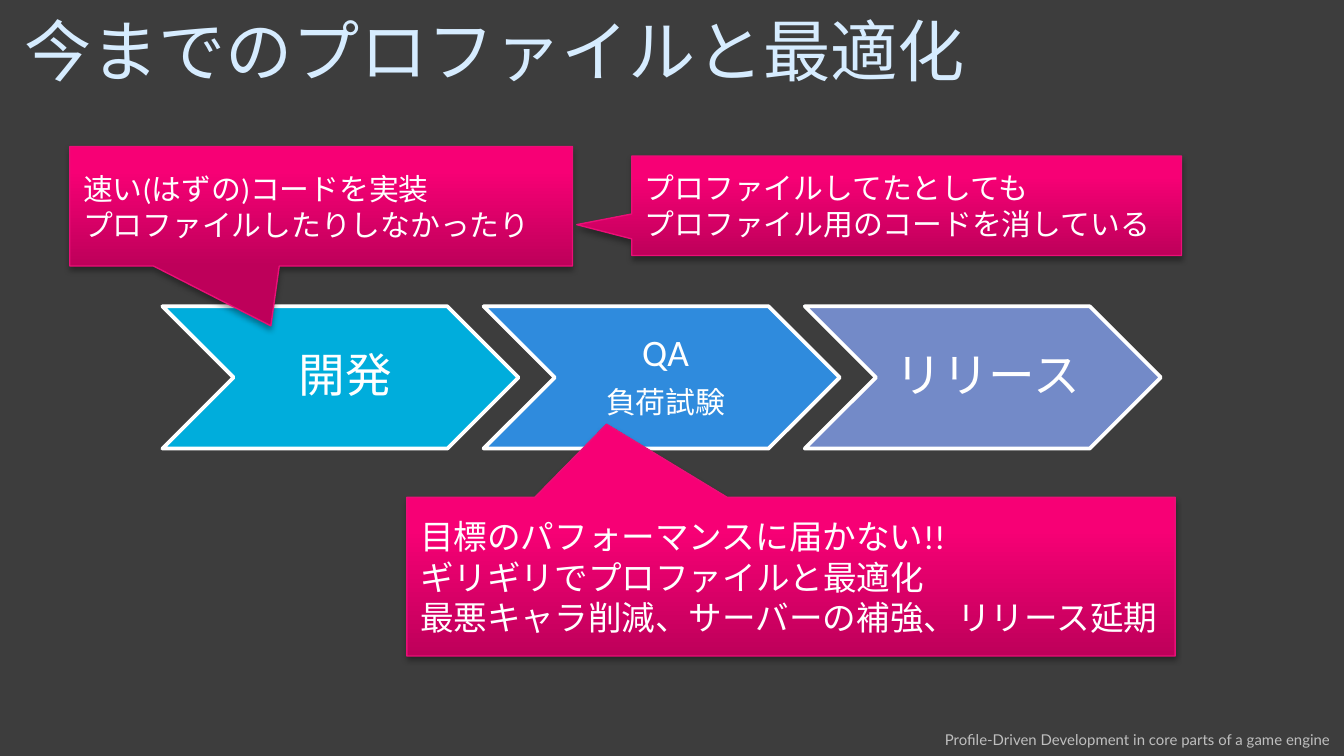
"""Build the slide on profiling and optimisation across the development stages."""
from copy import deepcopy
from dataclasses import dataclass

from lxml.etree import SubElement
from pptx import Presentation
from pptx.dml.color import RGBColor
from pptx.enum.shapes import MSO_SHAPE
from pptx.enum.text import MSO_ANCHOR, PP_ALIGN
from pptx.oxml.ns import qn
from pptx.shapes.autoshape import Shape
from pptx.slide import Slide
from pptx.text.text import TextFrame
from pptx.util import Cm, Pt

BACKGROUND = RGBColor(0x3D, 0x3D, 0x3D)
TITLE_COLOR = RGBColor(0xD6, 0xEC, 0xFF)
FOOTER_COLOR = RGBColor(0xBF, 0xBF, 0xBF)
WHITE = RGBColor(0xFF, 0xFF, 0xFF)
CYAN = RGBColor(0x00, 0xAD, 0xDC)
BLUE = RGBColor(0x2F, 0x8B, 0xDD)
PERIWINKLE = RGBColor(0x73, 0x8A, 0xC8)
CALLOUT_LINE = RGBColor(0xEA, 0x0F, 0x77)
CALLOUT_STOPS = (
    (0, RGBColor(0xBE, 0x00, 0x5A)),
    (0.8, RGBColor(0xF7, 0x00, 0x75)),
    (1, RGBColor(0xF8, 0x00, 0x76)),
)

STAGE_LEFT, STAGE_TOP, STAGE_PITCH = 3.07, 5.79, 6.07
STAGE_WIDTH, STAGE_HEIGHT = 6.73, 2.69


@dataclass(frozen=True)
class Line:
    text: str
    size: float


@dataclass(frozen=True)
class Stage:
    lines: tuple[Line, ...]
    color: RGBColor
    left_inset: float
    inset: float


@dataclass(frozen=True)
class Callout:
    left: float
    top: float
    width: float
    height: float
    tip: tuple[float, float]
    lines: tuple[Line, ...]


STAGES = (
    Stage((Line("開発", 25),), CYAN, 0.28, 0.1),
    Stage((Line("QA", 20), Line("負荷試験", 16)), BLUE, 0.23, 0.08),
    Stage((Line("リリース", 25),), PERIWINKLE, 0.28, 0.1),
)

CALLOUTS = (
    Callout(1.32, 2.77, 9.5, 2.26, (-0.1, 1), (
        Line("速い(はずの)コードを実装", 16),
        Line("プロファイルしたりしなかったり", 16),
    )),
    Callout(7.69, 9.4, 14.52, 3, (-0.24, -0.96), (
        Line("目標のパフォーマンスに届かない!!", 18),
        Line("ギリギリでプロファイルと最適化", 18),
        Line("最悪キャラ削減、サーバーの補強、リリース延期", 18),
    )),
    Callout(11.94, 2.95, 10.39, 1.88, (-0.6, 0.19), (
        Line("プロファイルしてたとしても", 16),
        Line("プロファイル用のコードを消している", 16),
    )),
)


def write_lines(frame: TextFrame, lines: tuple[Line, ...], color: RGBColor,
                alignment: PP_ALIGN, font_name: str = "Calibri") -> None:
    frame.word_wrap = True
    for index, line in enumerate(lines):
        paragraph = frame.add_paragraph() if index else frame.paragraphs[0]
        paragraph.alignment = alignment
        run = paragraph.add_run()
        run.text = line.text
        run.font.name = font_name
        run.font.size = Pt(line.size)
        run.font.color.rgb = color


def fill_with_gradient(shape: Shape) -> None:
    shape.fill.gradient()
    shape.fill.gradient_angle = 90
    stop_list = shape._element.spPr.find(qn("a:gradFill")).find(qn("a:gsLst"))
    stop_list.append(deepcopy(stop_list[-1]))
    for stop, (position, color) in zip(shape.fill.gradient_stops, CALLOUT_STOPS):
        stop.position = position
        stop.color.rgb = color


def add_soft_shadow(shape: Shape) -> None:
    shape.shadow.inherit = False
    effects = shape._element.spPr.find(qn("a:effectLst"))
    shadow = SubElement(effects, qn("a:outerShdw"), blurRad=str(Pt(3.1)),
                        dist=str(Pt(1.8)), dir="5400000", rotWithShape="0")
    color = SubElement(shadow, qn("a:srgbClr"), val="000000")
    SubElement(color, qn("a:alpha"), val="35000")


def add_title(slide: Slide) -> None:
    title = slide.shapes.title
    title.left, title.top, title.width, title.height = Cm(0.2), Cm(0.1), Cm(24.87), Cm(1.68)
    title.text_frame.vertical_anchor = MSO_ANCHOR.MIDDLE
    write_lines(title.text_frame, (Line("今までのプロファイルと最適化", 36),),
                TITLE_COLOR, PP_ALIGN.LEFT)


def add_footer(slide: Slide) -> None:
    footer = slide.shapes.add_textbox(Cm(15.7), Cm(13.69), Cm(9.7), Cm(0.61))
    line = Line("Profile-Driven Development in core parts of a game engine", 8)
    write_lines(footer.text_frame, (line,), FOOTER_COLOR, PP_ALIGN.RIGHT, "Lato")


def add_stage(slide: Slide, stage: Stage, index: int) -> None:
    chevron = slide.shapes.add_shape(
        MSO_SHAPE.CHEVRON, Cm(STAGE_LEFT + index * STAGE_PITCH), Cm(STAGE_TOP),
        Cm(STAGE_WIDTH), Cm(STAGE_HEIGHT))
    chevron.shadow.inherit = False
    chevron.fill.solid()
    chevron.fill.fore_color.rgb = stage.color
    chevron.line.color.rgb = WHITE
    chevron.line.width = Pt(2)
    frame = chevron.text_frame
    frame.vertical_anchor = MSO_ANCHOR.MIDDLE
    frame.margin_left = Cm(stage.left_inset)
    frame.margin_top = frame.margin_right = frame.margin_bottom = Cm(stage.inset)
    write_lines(frame, stage.lines, WHITE, PP_ALIGN.CENTER)
    for paragraph in frame.paragraphs:
        paragraph.line_spacing = 0.9
        space_after = SubElement(paragraph._p.get_or_add_pPr(), qn("a:spcAft"))
        SubElement(space_after, qn("a:spcPct"), val="35000")


def add_callout(slide: Slide, callout: Callout) -> None:
    shape = slide.shapes.add_shape(
        MSO_SHAPE.RECTANGULAR_CALLOUT, Cm(callout.left), Cm(callout.top),
        Cm(callout.width), Cm(callout.height))
    shape.adjustments[0], shape.adjustments[1] = callout.tip
    fill_with_gradient(shape)
    shape.line.color.rgb = CALLOUT_LINE
    shape.line.width = Pt(0.75)
    add_soft_shadow(shape)
    shape.text_frame.vertical_anchor = MSO_ANCHOR.MIDDLE
    write_lines(shape.text_frame, callout.lines, WHITE, PP_ALIGN.LEFT)


def main() -> None:
    presentation = Presentation()
    presentation.slide_width, presentation.slide_height = Cm(25.4), Cm(14.29)
    slide = presentation.slides.add_slide(presentation.slide_layouts.get_by_name("Title Only"))
    slide.background.fill.solid()
    slide.background.fill.fore_color.rgb = BACKGROUND
    add_footer(slide)
    add_title(slide)
    for index, stage in enumerate(STAGES):
        add_stage(slide, stage, index)
    for callout in CALLOUTS:
        add_callout(slide, callout)
    presentation.save("out.pptx")


if __name__ == "__main__":
    main()
